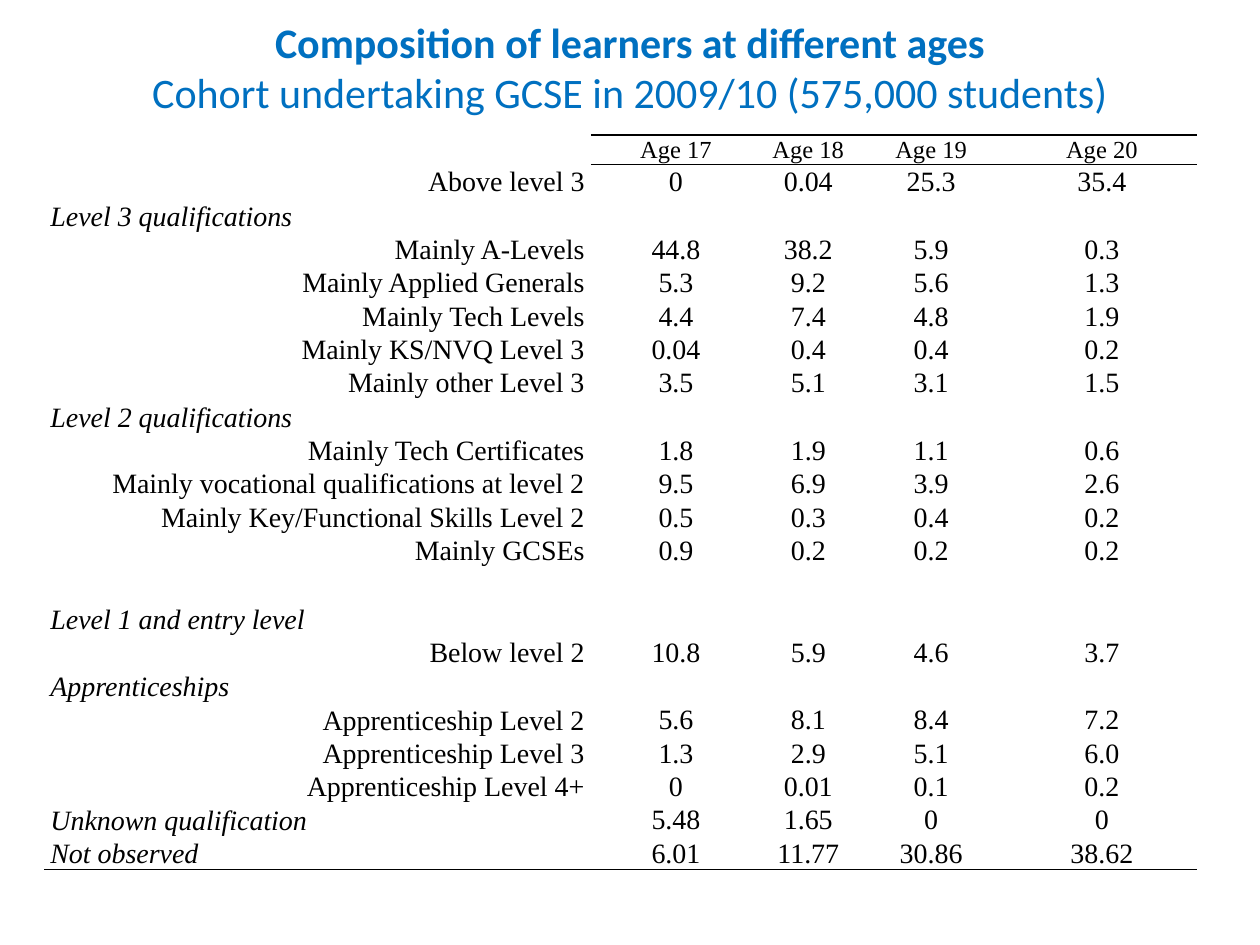
from pptx import Presentation
from pptx import util as u
from pptx.dml.color import RGBColor
from pptx.enum import text
from pptx.oxml import parse_xml
from pptx.oxml.ns import nsdecls

# Content: (label, values); a label in italics opens a group or stands alone
TITLE = ("Composition of learners at different ages",
         "Cohort undertaking GCSE in 2009/10 (575,000 students)")
AGES = ("Age 17", "Age 18", "Age 19", "Age 20")
ROWS = [
    ("Above level 3", "0 0.04 25.3 35.4"),
    ("Level 3 qualifications", ""),
    ("Mainly A-Levels", "44.8 38.2 5.9 0.3"),
    ("Mainly Applied Generals", "5.3 9.2 5.6 1.3"),
    ("Mainly Tech Levels", "4.4 7.4 4.8 1.9"),
    ("Mainly KS/NVQ Level 3", "0.04 0.4 0.4 0.2"),
    ("Mainly other Level 3", "3.5 5.1 3.1 1.5"),
    ("Level 2 qualifications", ""),
    ("Mainly Tech Certificates", "1.8 1.9 1.1 0.6"),
    ("Mainly vocational qualifications at level 2", "9.5 6.9 3.9 2.6"),
    ("Mainly Key/Functional Skills Level 2", "0.5 0.3 0.4 0.2"),
    ("Mainly GCSEs", "0.9 0.2 0.2 0.2"),
    ("", ""),
    ("Level 1 and entry level", ""),
    ("Below level 2", "10.8 5.9 4.6 3.7"),
    ("Apprenticeships", ""),
    ("Apprenticeship Level 2", "5.6 8.1 8.4 7.2"),
    ("Apprenticeship Level 3", "1.3 2.9 5.1 6.0"),
    ("Apprenticeship Level 4+", "0 0.01 0.1 0.2"),
    ("Unknown qualification", "5.48 1.65 0 0"),
    ("Not observed", "6.01 11.77 30.86 38.62"),
]
STANDALONE = ("Unknown qualification", "Not observed")
COLUMN_WIDTHS = (4.34, 1.35, 0.75, 1.2, 1.51)
HEADER_HEIGHT, BODY_HEIGHT = 0.23, 5.56
NO_STYLE = "{2D5ABB26-0587-4C30-8999-92F81FD0307C}"


def style_run(r, font, size, color, bold=False, italic=False):
    r.font.name, r.font.size = font, u.Pt(size)
    r.font.bold, r.font.italic = bold, italic
    r.font.color.rgb = RGBColor.from_string(color)


def fill_cell(cell, value, size, align, anchor, italic=False):
    cell.fill.background()
    cell.margin_left = cell.margin_right = u.Inches(0.05)
    cell.margin_top = cell.margin_bottom = 0
    cell.vertical_anchor = anchor
    p = cell.text_frame.paragraphs[0]
    p.text = value
    p.alignment = align
    p.line_spacing = 1.07
    for r in p.runs:
        style_run(r, "Times New Roman", size, "000000", italic=italic)
    if not value:  # keeps an empty cell from stretching its row
        p._p.get_or_add_endParaRPr().set("sz", str(size * 100))


def add_borders(cell, sides):
    """Draw 1 pt black borders; sides are in schema order (lnT, lnB)."""
    tcPr = cell._tc.get_or_add_tcPr()
    for i, side in enumerate(sides):
        tcPr.insert(i, parse_xml(
            f'<a:{side} {nsdecls("a")} w="12700"><a:solidFill>'
            f'<a:srgbClr val="000000"/></a:solidFill></a:{side}>'))


prs = Presentation()
prs.slide_width, prs.slide_height = u.Inches(10), u.Inches(7.5)
s = prs.slides.add_slide(prs.slide_layouts[5])

# Title
title = s.shapes.title
title.left, title.top = u.Inches(0.5), u.Inches(0.3)
title.width, title.height = u.Inches(9), u.Inches(0.46)
tf = title.text_frame
tf.text = "\v".join(TITLE)
tf.auto_size = text.MSO_AUTO_SIZE.NONE
tf.vertical_anchor = text.MSO_ANCHOR.MIDDLE
p = tf.paragraphs[0]
p.alignment = text.PP_ALIGN.CENTER
for i, r in enumerate(p.runs):
    style_run(r, "Calibri", 24, "0070C0", bold=i == 0)

# Table frame
frame = s.shapes.add_table(
    len(ROWS) + 1, len(COLUMN_WIDTHS), u.Inches(0.35), u.Inches(1.07),
    u.Inches(sum(COLUMN_WIDTHS)), u.Inches(HEADER_HEIGHT + BODY_HEIGHT))
table = frame.table
table.first_row = table.horz_banding = False
table._tbl.tblPr.find("{*}tableStyleId").text = NO_STYLE
for column, width in zip(table.columns, COLUMN_WIDTHS):
    column.width = u.Inches(width)
for row in table.rows:
    row.height = u.Inches(BODY_HEIGHT / len(ROWS))
table.rows[0].height = u.Inches(HEADER_HEIGHT)

# Table header
CENTER, MIDDLE = text.PP_ALIGN.CENTER, text.MSO_ANCHOR.MIDDLE
for j, value in enumerate(("",) + AGES):
    fill_cell(table.cell(0, j), value, 14, CENTER, MIDDLE)
    if value:
        add_borders(table.cell(0, j), ("lnT", "lnB"))

# Table body
for i, (label, numbers) in enumerate(ROWS, 1):
    heading = not numbers or label in STANDALONE
    align = text.PP_ALIGN.LEFT if heading else text.PP_ALIGN.RIGHT
    fill_cell(table.cell(i, 0), label, 16, align, text.MSO_ANCHOR.BOTTOM, heading)
    values = numbers.split() or [""] * len(AGES)
    for j, value in enumerate(values, 1):
        fill_cell(table.cell(i, j), value, 16, CENTER, MIDDLE)
for j in range(len(COLUMN_WIDTHS)):
    add_borders(table.cell(len(ROWS), j), ("lnB",))

prs.save("out.pptx")
